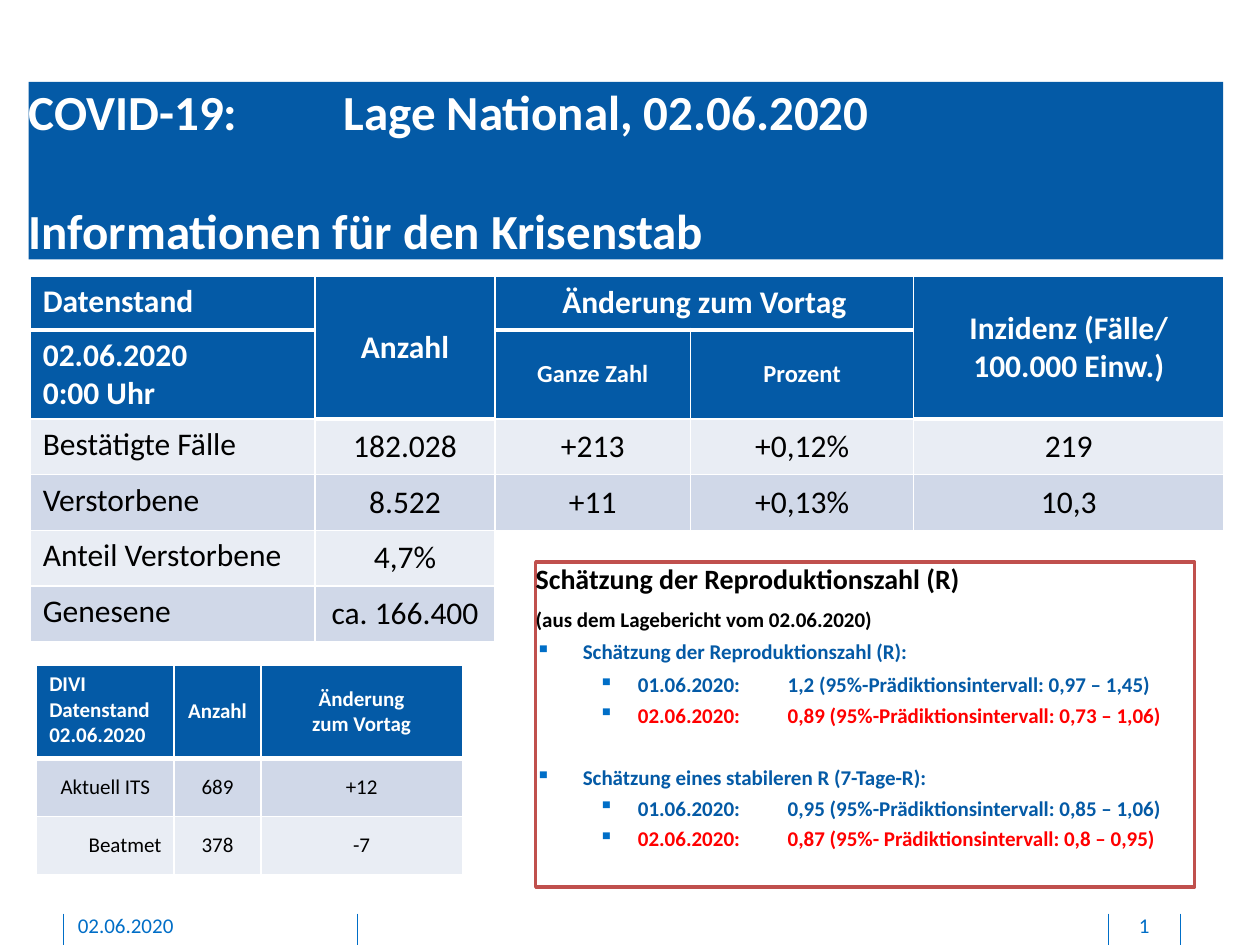
from dataclasses import dataclass

from lxml.etree import SubElement
from pptx import Presentation
from pptx.dml.color import RGBColor
from pptx.enum.shapes import MSO_CONNECTOR, MSO_SHAPE
from pptx.enum.text import MSO_ANCHOR, PP_ALIGN
from pptx.oxml.ns import qn
from pptx.util import Cm, Pt


@dataclass(frozen=True)
class Theme:
    font: str = "Calibri"
    blue: str = "045AA6"
    accent: str = "006EC7"
    red: str = "FF0000"
    frame: str = "C0504D"
    white: str = "FFFFFF"
    black: str = "000000"
    bands: tuple = ("E9EDF4", "D0D8E8")
    title: int = 28
    large: int = 18
    heading: int = 16
    medium: int = 14
    small: int = 12


THEME = Theme()

CASE_ROWS = [
    ["Datenstand", "Anzahl", "Änderung zum Vortag", "", "Inzidenz (Fälle/\n100.000 Einw.)"],
    ["02.06.2020\n0:00 Uhr", "", "Ganze Zahl", "Prozent", ""],
    ["Bestätigte Fälle", "182.028", "+213", "+0,12%", "219"],
    ["Verstorbene", "8.522", "+11", "+0,13%", "10,3"],
    ["Anteil Verstorbene", "4,7%", "", "", ""],
    ["Genesene", "ca. 166.400", "", "", ""],
]
CARE_ROWS = [
    ["DIVI\nDatenstand\n02.06.2020", "Anzahl", "Änderung\nzum Vortag"],
    ["Aktuell ITS", "689", "+12"],
    ["Beatmet", "378", "-7"],
]
# Each estimate: heading, space before heading and first value, dated values
ESTIMATES = [
    ("Schätzung der Reproduktionszahl (R):", 4.3, 4.3,
     ["01.06.2020:\t1,2 (95%-Prädiktionsintervall: 0,97 – 1,45)",
      "02.06.2020:\t0,89 (95%-Prädiktionsintervall: 0,73 – 1,06)"]),
    ("Schätzung eines stabileren R (7-Tage-R):", 21.5, 3,
     ["01.06.2020:\t0,95 (95%-Prädiktionsintervall: 0,85 – 1,06)",
      "02.06.2020:\t0,87 (95%- Prädiktionsintervall: 0,8 – 0,95)"]),
]


def apply_format(target, values):
    for name, value in values.items():
        setattr(target, name, value)


def style_font(paragraph, size, color, bold=False):
    apply_format(paragraph.font, {"name": THEME.font, "size": Pt(size), "bold": bold})
    paragraph.font.color.rgb = RGBColor.from_string(color)


def prepare_frame(shape):
    apply_format(shape.text_frame, {
        "word_wrap": True, "vertical_anchor": MSO_ANCHOR.TOP,
        "margin_left": 0, "margin_right": 0, "margin_top": 0, "margin_bottom": 0})
    return shape.text_frame


def add_paragraph(frame, text, size, color, bold=True, before=0, indent=None, tab=None):
    """Fill the empty first paragraph, or append one; indent is (left, hanging)."""
    paragraph = frame.paragraphs[0]
    if paragraph.runs:
        paragraph = frame.add_paragraph()
    paragraph.text = text
    paragraph.alignment = PP_ALIGN.LEFT
    if before:
        paragraph.space_before = Pt(before)
    properties = paragraph._p.get_or_add_pPr()
    if indent:
        left, hanging = indent
        properties.set("marL", str(Cm(left)))
        properties.set("indent", str(-Cm(hanging)))
        bullet_color = SubElement(properties, qn("a:buClr"))
        SubElement(bullet_color, qn("a:srgbClr"), val=THEME.accent)
        SubElement(properties, qn("a:buChar"), char="▪")
    if tab:
        tabs = SubElement(properties, qn("a:tabLst"))
        SubElement(tabs, qn("a:tab"), pos=str(Cm(tab)), algn="l")
    style_font(paragraph, size, color, bold)
    return paragraph


def add_panel(slide, left, top, width, height, fill, line=None):
    shape = slide.shapes.add_shape(
        MSO_SHAPE.RECTANGLE, Cm(left), Cm(top), Cm(width), Cm(height))
    shape.shadow.inherit = False
    shape.fill.solid()
    shape.fill.fore_color.rgb = RGBColor.from_string(fill)
    if line:
        shape.line.color.rgb = RGBColor.from_string(line)
        shape.line.width = Pt(2)
    else:
        shape.line.fill.background()
    return prepare_frame(shape)


def add_footer_text(slide, text, left, width, alignment):
    box = slide.shapes.add_textbox(Cm(left), Cm(18.39), Cm(width), Cm(0.53))
    paragraph = add_paragraph(prepare_frame(box), text, THEME.small, THEME.accent, False)
    paragraph.alignment = alignment


def add_footer_line(slide, x):
    line = slide.shapes.add_connector(
        MSO_CONNECTOR.STRAIGHT, Cm(x), Cm(18.42), Cm(x), Cm(19.05))
    line.line.color.rgb = RGBColor.from_string(THEME.accent)
    line.line.width = Pt(0.5)
    SubElement(line._element.spPr, qn("a:effectLst"))


def set_borders(cell, bottom):
    properties = cell._tc.get_or_add_tcPr()
    for side, width in (("lnL", 1), ("lnR", 1), ("lnB", bottom)):
        border = SubElement(properties, qn(f"a:{side}"), w=str(Pt(width)))
        fill = SubElement(border, qn("a:solidFill"))
        SubElement(fill, qn("a:srgbClr"), val=THEME.white)


def add_data_table(slide, rows, left, top, widths, heights, headers, size, bands, merges=()):
    shape = slide.shapes.add_table(
        len(rows), len(widths), Cm(left), Cm(top), Cm(sum(widths)), Cm(sum(heights)))
    table = shape.table
    table.horz_banding = False
    for column, width in zip(table.columns, widths):
        column.width = Cm(width)
    for row, height in zip(table.rows, heights):
        row.height = Cm(height)
    for first, last in merges:
        table.cell(*first).merge(table.cell(*last))
    for r, row in enumerate(rows):
        header = r < headers
        for c, text in enumerate(row):
            cell = table.cell(r, c)
            set_borders(cell, 3 if r == 0 or cell.is_spanned else 1)
            band = bands[(r - headers) % 2] if text else THEME.white
            cell.fill.solid()
            cell.fill.fore_color.rgb = RGBColor.from_string(THEME.blue if header else band)
            cell.vertical_anchor = MSO_ANCHOR.MIDDLE if c else MSO_ANCHOR.TOP
            if not text:
                continue
            cell.text_frame.text = text
            for paragraph in cell.text_frame.paragraphs:
                paragraph.alignment = PP_ALIGN.CENTER if c else PP_ALIGN.LEFT
                style_font(paragraph, size, THEME.white if header else THEME.black, header)
    return table


def add_estimates(slide):
    frame = add_panel(slide, 10.8, 11.33, 13.28, 6.55, THEME.white, THEME.frame)
    add_paragraph(frame, "Schätzung der Reproduktionszahl (R)", THEME.heading, THEME.black)
    add_paragraph(frame, "(aus dem Lagebericht vom 02.06.2020)", THEME.small,
                  THEME.black, before=6)
    for heading, before, first_gap, values in ESTIMATES:
        add_paragraph(frame, heading, THEME.small, THEME.blue, before=before,
                      indent=(0.95, 0.95))
        for text, color, gap in zip(values, (THEME.blue, THEME.red), (first_gap, 3)):
            paragraph = add_paragraph(frame, text, THEME.small, color, before=gap,
                                      indent=(2.06, 0.79), tab=5.08)
            paragraph.level = 1


def main():
    presentation = Presentation()
    apply_format(presentation, {"slide_width": Cm(25.4), "slide_height": Cm(19.05)})
    slide = presentation.slides.add_slide(presentation.slide_layouts[6])

    # Footer
    for x in (1.27, 7.21, 22.35, 23.8):
        add_footer_line(slide, x)
    add_footer_text(slide, "02.06.2020", 1.57, 5.16, PP_ALIGN.LEFT)
    add_footer_text(slide, "1", 22.38, 1.37, PP_ALIGN.CENTER)

    # Title band
    title = add_panel(slide, 0.58, 1.65, 24.08, 3.58, THEME.blue)
    add_paragraph(title, "COVID-19:\tLage National, 02.06.2020", THEME.title,
                  THEME.white, tab=6.35)
    add_paragraph(title, "Informationen für den Krisenstab", THEME.title,
                  THEME.white, before=34)

    # National case numbers
    cases = add_data_table(
        slide, CASE_ROWS, 0.61, 5.56, [5.74, 3.63, 3.94, 4.5, 6.25],
        [1.09, 1.8] + [1.12] * 4, 2, THEME.large, THEME.bands,
        merges=[((0, 1), (1, 1)), ((0, 2), (0, 3)), ((0, 4), (1, 4))])
    for column in (2, 3):
        cases.cell(1, column).text_frame.paragraphs[0].font.size = Pt(THEME.medium)

    # Intensive care numbers
    care = add_data_table(
        slide, CARE_ROWS, 0.74, 13.41, [2.77, 1.75, 4.06], [1.88, 1.17, 1.17],
        1, THEME.small, THEME.bands[::-1])
    for row, alignment in ((1, PP_ALIGN.CENTER), (2, PP_ALIGN.RIGHT)):
        label = care.cell(row, 0)
        label.vertical_anchor = MSO_ANCHOR.MIDDLE
        label.text_frame.paragraphs[0].alignment = alignment

    # Reproduction number
    add_estimates(slide)

    presentation.save("out.pptx")


if __name__ == "__main__":
    main()
